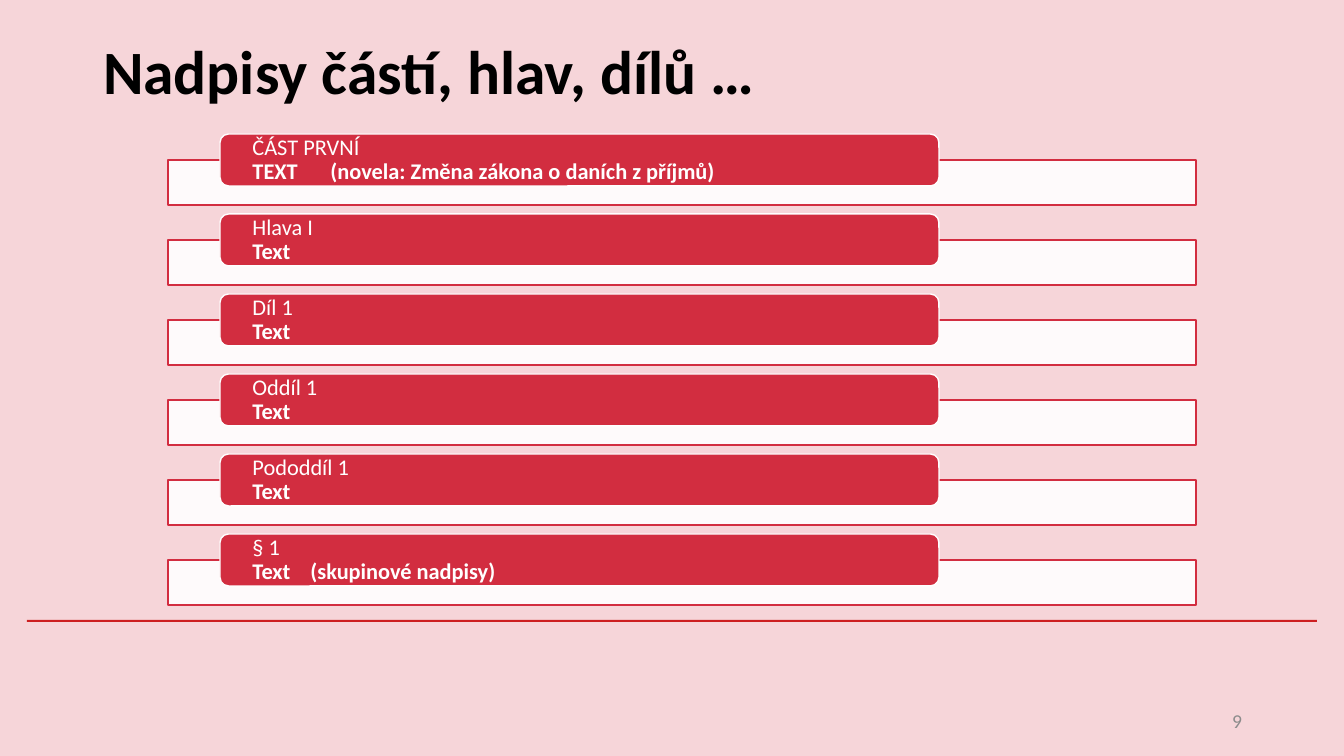
from lxml.etree import SubElement
from pptx import Presentation
from pptx.dml.color import RGBColor
from pptx.enum.shapes import MSO_SHAPE
from pptx.enum.text import MSO_ANCHOR, PP_ALIGN
from pptx.oxml.ns import qn
from pptx.util import Pt

SLIDE_WIDTH, SLIDE_HEIGHT = 1344, 756
EMU_PER_PX = 12192000 / SLIDE_WIDTH
FONT = "Calibri"

PINK = RGBColor(0xF6, 0xD5, 0xD9)
CRIMSON = RGBColor(0xD2, 0x2D, 0x40)
RULE_RED = RGBColor(0xCD, 0x1F, 0x21)
WHITE = RGBColor(0xFF, 0xFF, 0xFF)
BLACK = RGBColor(0x00, 0x00, 0x00)
GREY = RGBColor(0x8C, 0x8C, 0x8C)

HEADINGS = [
    ("ČÁST PRVNÍ", "TEXT\t(novela: Změna zákona o daních z příjmů)", 78),
    ("Hlava I", "Text", None),
    ("Díl 1", "Text", None),
    ("Oddíl 1", "Text", None),
    ("Pododdíl 1", "Text", None),
    ("§ 1", "Text\t(skupinové nadpisy)", 58),
]


def px(length):
    return round(length * EMU_PER_PX)


def set_font(paragraph, size, color):
    paragraph.font.name = FONT
    paragraph.font.size = Pt(size)
    paragraph.font.color.rgb = color


def add_filled_shape(slide, kind, box, fill, line=None):
    shape = slide.shapes.add_shape(kind, *map(px, box))
    shape.shadow.inherit = False
    shape.fill.solid()
    shape.fill.fore_color.rgb = fill
    if line is None:
        shape.line.fill.background()
    else:
        shape.line.color.rgb = line
        shape.line.width = Pt(1)
    return shape


def set_opacity(shape, percent):
    color = shape.fill._xPr.find(qn("a:solidFill"))[0]
    SubElement(color, qn("a:alpha"), val=str(percent * 1000))


def add_tab_stop(paragraph, position):
    tabs = SubElement(paragraph._p.get_or_add_pPr(), qn("a:tabLst"))
    SubElement(tabs, qn("a:tab"), pos=str(px(position)), algn="l")


def add_title(slide, box, text):
    title = slide.shapes.title
    title.left, title.top, title.width, title.height = map(px, box)
    frame = title.text_frame
    frame.text = text
    frame.word_wrap = True
    frame.vertical_anchor = MSO_ANCHOR.MIDDLE
    paragraph = frame.paragraphs[0]
    paragraph.alignment = PP_ALIGN.LEFT
    paragraph.line_spacing = 0.9
    set_font(paragraph, 44, BLACK)
    paragraph.font.bold = True


def add_heading_row(slide, box, label, text, tab_position):
    left, top, width, height = box
    bar = add_filled_shape(slide, MSO_SHAPE.RECTANGLE,
                           (left, top + 26, width, height - 26), WHITE, CRIMSON)
    set_opacity(bar, 90)
    tag = add_filled_shape(slide, MSO_SHAPE.ROUNDED_RECTANGLE,
                           (left + 52, top, 719, 52), CRIMSON, WHITE)
    frame = tag.text_frame
    frame.word_wrap = True
    frame.vertical_anchor = MSO_ANCHOR.MIDDLE
    frame.margin_left = frame.margin_right = px(30)
    frame.margin_top = frame.margin_bottom = 0
    paragraph = frame.paragraphs[0]
    paragraph.alignment = PP_ALIGN.LEFT
    paragraph.line_spacing = 0.9
    if tab_position:
        add_tab_stop(paragraph, tab_position)
    set_font(paragraph, 16, WHITE)
    paragraph.add_run().text = label
    paragraph.add_line_break()
    run = paragraph.add_run()
    run.text = text
    run.font.bold = True


def add_heading_list(slide, box):
    left, top, width, height = box
    pitch = height // len(HEADINGS)
    for index, heading in enumerate(HEADINGS):
        row = (left, top + index * pitch, width, pitch - 9)
        add_heading_row(slide, row, *heading)


def add_slide_number(slide, box, number):
    frame = slide.shapes.add_textbox(*map(px, box)).text_frame
    frame.word_wrap = True
    frame.vertical_anchor = MSO_ANCHOR.MIDDLE
    frame.text = number
    paragraph = frame.paragraphs[0]
    paragraph.alignment = PP_ALIGN.RIGHT
    set_font(paragraph, 14, GREY)


def main():
    presentation = Presentation()
    presentation.slide_width = px(SLIDE_WIDTH)
    presentation.slide_height = px(SLIDE_HEIGHT)
    slide = presentation.slides.add_slide(presentation.slide_layouts[5])
    slide.background.fill.solid()
    slide.background.fill.fore_color.rgb = PINK
    add_filled_shape(slide, MSO_SHAPE.RECTANGLE, (27, 620, 1290, 2), RULE_RED)
    add_title(slide, (93, 2, 1159, 146), "Nadpisy částí, hlav, dílů …")
    add_heading_list(slide, (168, 134, 1028, 480))
    add_slide_number(slide, (950, 701, 302, 40), "9")
    presentation.save("out.pptx")


if __name__ == "__main__":
    main()
